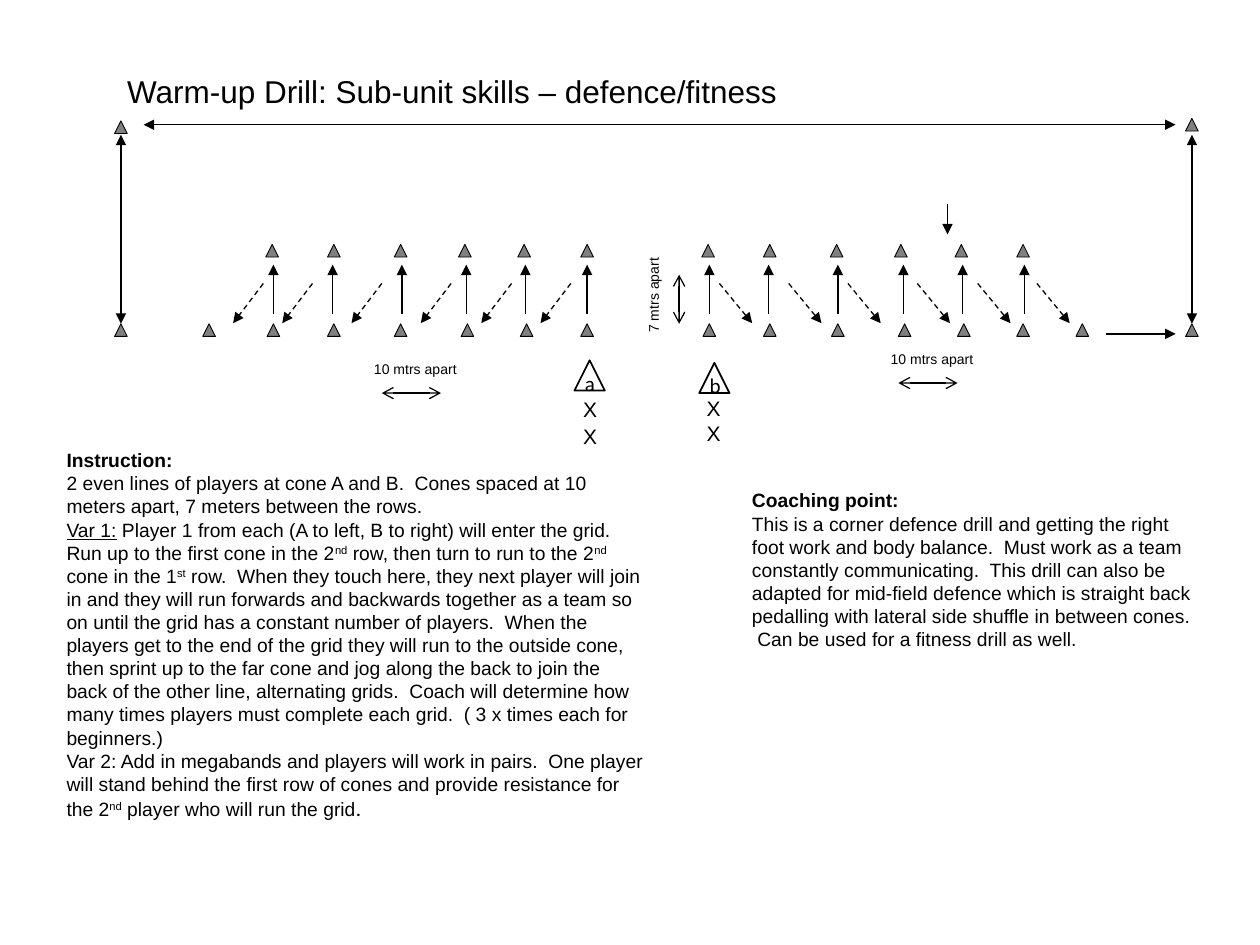
from dataclasses import dataclass
from typing import Optional

from lxml.etree import SubElement
from pptx import Presentation
from pptx.dml.color import RGBColor
from pptx.enum.dml import MSO_LINE_DASH_STYLE as Dash
from pptx.enum.shapes import MSO_CONNECTOR as Connector, MSO_SHAPE as Preset
from pptx.enum.text import MSO_ANCHOR as Anchor, MSO_AUTO_SIZE as AutoSize, PP_ALIGN as Align
from pptx.oxml.ns import qn
from pptx.util import Emu, Inches, Pt

BLACK = RGBColor(0x00, 0x00, 0x00)
GREY = RGBColor(0x80, 0x80, 0x80)

# The page is a grid of 100 columns by 75 square rows.
COLUMNS, ROWS = 100, 75
CELL = Inches(10) / COLUMNS

CONE = 1
BACK_ROW, FRONT_ROW = 19.4, 25.7
RUN_TOP, RUN_BOTTOM = 21, 24.9
TURN_TOP, TURN_BOTTOM = 22.5, 25.65


@dataclass(frozen=True)
class DrillGrid:
    front: tuple[float, ...]
    back: tuple[float, ...]
    runs: tuple[float, ...]
    turns: tuple[float, ...]
    turn_shift: float


@dataclass(frozen=True)
class Arrow:
    x1: float
    y1: float
    x2: float
    y2: float
    head: Optional[str] = None
    tail: Optional[str] = "triangle"
    dashed: bool = False


@dataclass(frozen=True)
class Label:
    text: str
    left: float
    top: float
    width: float
    height: float
    size: float
    wrap: bool = False
    rotation: float = 0


@dataclass(frozen=True)
class StartCone:
    letter: str
    left: float
    top: float


DRILL_GRIDS = (
    DrillGrid(
        front=(16.1, 21.2, 26, 31.3, 36.6, 41.3, 46.1),
        back=(21.1, 26, 31.3, 36.4, 41.1, 46.1),
        runs=(21.7, 26.4, 31.9, 37, 41.7, 46.6),
        turns=(20.9, 24.8, 30.3, 35.8, 40.6, 45.3),
        turn_shift=-2.4,
    ),
    DrillGrid(
        front=(55.8, 60.6, 66, 71.3, 76, 80.7, 85.4),
        back=(55.7, 60.6, 65.9, 71, 75.8, 80.7),
        runs=(56.3, 61, 66.5, 71.7, 76.4, 81.3),
        turns=(57.1, 62.6, 67.3, 72.8, 77.6, 82.3),
        turn_shift=2.6,
    ),
)

CORNER_CONES = ((9.1, 9.6), (94.1, 9.4), (9.1, FRONT_ROW), (94.1, FRONT_ROW))

START_CONES = (StartCone("a", 45.6, 28.6), StartCone("b", 55.5, 28.8))

ARROWS = (
    Arrow(9.6, 25.7, 9.6, 10.7, head="triangle"),
    Arrow(94.6, 25.7, 94.6, 10.7, head="triangle"),
    Arrow(93.3, 9.9, 11.4, 9.9, head="triangle"),
    Arrow(87.8, 26.5, 93.3, 26.5),
    Arrow(75.2, 16.2, 75.2, 18.6),
    Arrow(53.9, 21.8, 53.9, 25.7, head="arrow", tail="arrow"),
    Arrow(76, 30.4, 71.3, 30.4, head="arrow", tail="arrow"),
    Arrow(35, 31.2, 30.3, 31.2, head="arrow", tail="arrow"),
)

LABELS = (
    Label("Warm-up Drill: Sub-unit skills – defence/fitness", 9.1, 5.2, 54.1, 4, 18),
    Label("7 mtrs apart", 47.9, 22.2, 8, 2.4, 8, rotation=270),
    Label("10 mtrs apart", 69.7, 27.3, 8.7, 2.4, 8),
    Label("10 mtrs apart", 28.7, 28.1, 8.7, 2.4, 8),
) + tuple(
    Label("X", left, top, 4.7, 3, 12, wrap=True)
    for left, top in ((45.3, 31), (45.3, 33.1), (55.1, 30.9), (55.1, 32.9))
)

# Text between carets is superscript.
INSTRUCTIONS = (
    "Instruction:",
    "2 even lines of players at cone A and B.  Cones spaced at 10 meters apart, "
    "7 meters between the rows.",
    "Var 1: Player 1 from each (A to left, B to right) will enter the grid.  Run up to the "
    "first cone in the 2^nd^ row, then turn to run to the 2^nd^ cone in the 1^st^ row.  When "
    "they touch here, they next player will join in and they will run forwards and backwards "
    "together as a team so on until the grid has a constant number of players.  When the "
    "players get to the end of the grid they will run to the outside cone, then sprint up to "
    "the far cone and jog along the back to join the back of the other line, alternating "
    "grids.  Coach will determine how many times players must complete each grid.  "
    "( 3 x times each for beginners.)",
    "Var 2: Add in megabands and players will work in pairs.  One player will stand behind "
    "the first row of cones and provide resistance for the 2^nd^ player who will run the grid",
)
COACHING = (
    "Coaching point:",
    "This is a corner defence drill and getting the right foot work and body balance.  Must "
    "work as a team constantly communicating.  This drill can also be adapted for mid-field "
    "defence which is straight back pedalling with lateral side shuffle in between cones.  "
    "Can be used for a fitness drill as well.",
)
UNDERLINED = "Var 1:"


def cells(count: float) -> Emu:
    return Emu(round(count * CELL))


def set_font(font, size: float, name: str = "Arial", bold: bool = False) -> None:
    font.size, font.name, font.bold = Pt(size), name, bold
    font.color.rgb = BLACK


def add_text_box(slide, left: float, top: float, width: float, height: float, wrap: bool):
    box = slide.shapes.add_textbox(*map(cells, (left, top, width, height)))
    box.text_frame.word_wrap = wrap
    box.text_frame.auto_size = AutoSize.SHAPE_TO_FIT_TEXT
    return box


def add_label(slide, label: Label) -> None:
    box = add_text_box(slide, label.left, label.top, label.width, label.height, label.wrap)
    box.rotation = label.rotation
    paragraph = box.text_frame.paragraphs[0]
    paragraph.text = label.text
    set_font(paragraph.font, label.size)


def add_marked_runs(paragraph, text: str) -> None:
    if text.startswith(UNDERLINED):
        lead = paragraph.add_run()
        lead.text = UNDERLINED
        lead.font.underline = True
        text = text.removeprefix(UNDERLINED)
    for index, part in enumerate(text.split("^")):
        run = paragraph.add_run()
        run.text = part
        if index % 2:
            run.font._element.set("baseline", "30000")


def add_notes_block(slide, texts: tuple[str, ...], left: float, top: float,
                    width: float, height: float):
    """Add body text whose first paragraph is a bold heading."""
    frame = add_text_box(slide, left, top, width, height, True).text_frame
    for index, text in enumerate(texts):
        paragraph = frame.add_paragraph() if index else frame.paragraphs[0]
        set_font(paragraph.font, 11, bold=index == 0)
        add_marked_runs(paragraph, text)
    return frame


def add_triangle(slide, left: float, top: float, side: float, line_width: float):
    triangle = slide.shapes.add_shape(
        Preset.ISOSCELES_TRIANGLE, *map(cells, (left, top, side, side)))
    triangle.shadow.inherit = False
    triangle.line.color.rgb = BLACK
    triangle.line.width = Pt(line_width)
    return triangle


def add_cone(slide, left: float, top: float) -> None:
    cone = add_triangle(slide, left, top, CONE, 0.5)
    cone.fill.solid()
    cone.fill.fore_color.rgb = GREY


def add_start_cone(slide, start: StartCone) -> None:
    cone = add_triangle(slide, start.left, start.top, 2.4, 1)
    cone.fill.background()
    cone.text_frame.vertical_anchor = Anchor.MIDDLE
    paragraph = cone.text_frame.paragraphs[0]
    paragraph.text = start.letter
    paragraph.alignment = Align.CENTER
    set_font(paragraph.font, 12, "Calibri")


def add_arrow(slide, arrow: Arrow) -> None:
    connector = slide.shapes.add_connector(
        Connector.STRAIGHT, *map(cells, (arrow.x1, arrow.y1, arrow.x2, arrow.y2)))
    line = connector.line
    line.color.rgb = BLACK
    line.width = Pt(0.75)
    if arrow.dashed:
        line.dash_style = Dash.DASH
    properties = connector._element.spPr
    outline = properties.find(qn("a:ln"))
    for tag, kind in (("a:headEnd", arrow.head), ("a:tailEnd", arrow.tail)):
        if kind:
            SubElement(outline, qn(tag), type=kind)
    SubElement(properties, qn("a:effectLst"))


def add_drill_grid(slide, grid: DrillGrid) -> None:
    for row, columns in ((BACK_ROW, grid.back), (FRONT_ROW, grid.front)):
        for column in columns:
            add_cone(slide, column, row)
    for x in grid.runs:
        add_arrow(slide, Arrow(x, RUN_BOTTOM, x, RUN_TOP))
    for x in grid.turns:
        add_arrow(slide, Arrow(x, TURN_TOP, x + grid.turn_shift, TURN_BOTTOM, dashed=True))


def main() -> None:
    deck = Presentation()
    deck.slide_width, deck.slide_height = cells(COLUMNS), cells(ROWS)
    slide = deck.slides.add_slide(deck.slide_layouts[6])
    for start in START_CONES:
        add_start_cone(slide, start)
    instructions = add_notes_block(slide, INSTRUCTIONS, 4.3, 35.1, 48, 30.8)
    full_stop = instructions.paragraphs[-1].add_run()
    full_stop.text = "."
    set_font(full_stop.font, 12, "Calibri")
    add_notes_block(slide, COACHING, 58.7, 38.3, 37, 14)
    for label in LABELS:
        add_label(slide, label)
    for grid in DRILL_GRIDS:
        add_drill_grid(slide, grid)
    for left, top in CORNER_CONES:
        add_cone(slide, left, top)
    for arrow in ARROWS:
        add_arrow(slide, arrow)
    deck.save("out.pptx")


if __name__ == "__main__":
    main()
